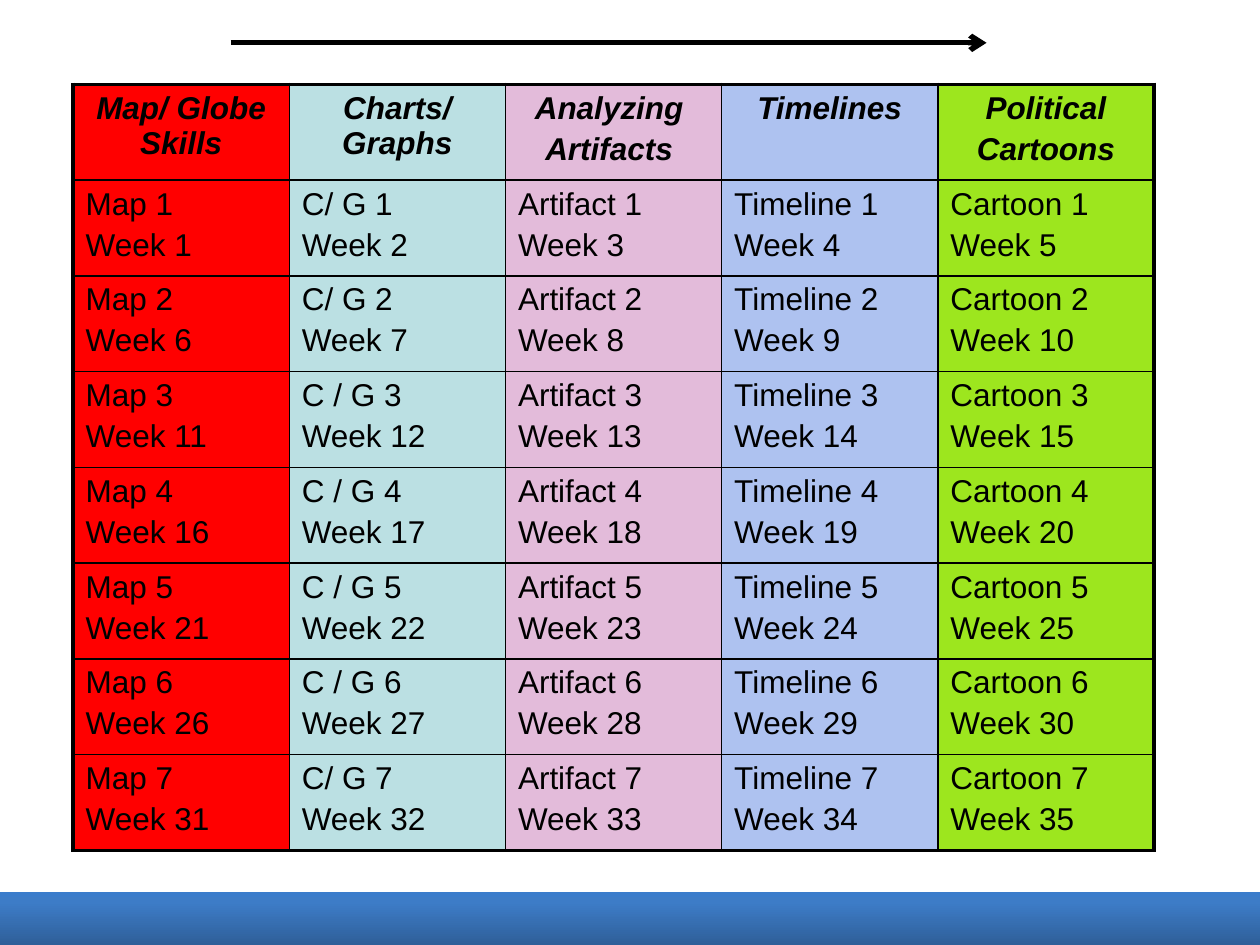
"""Build a weekly rotation table of social studies skills under an arrow."""
from copy import deepcopy
from dataclasses import dataclass

from lxml import etree
from pptx import Presentation
from pptx import util as u
from pptx.dml.color import RGBColor
from pptx.enum import shapes, text
from pptx.oxml import ns

BLACK = "000000"
WEEKS = 7
LEFT, TOP, COLUMN_WIDTH, ROW_HEIGHT = 0.58, 0.67, 1.716, 0.76
THIN, THICK = 1, 2.25


@dataclass(frozen=True)
class Skill:
    heading: str
    items: tuple[str, ...]
    fill: str


def numbered(name: str) -> tuple[str, ...]:
    return tuple(f"{name} {number}" for number in range(1, WEEKS + 1))


CHARTS = tuple(
    f"C / G {number}" if 3 <= number <= 6 else f"C/ G {number}"
    for number in range(1, WEEKS + 1)
)
SKILLS = (
    Skill("Map/ Globe Skills", numbered("Map"), "FF0000"),
    Skill("Charts/ Graphs", CHARTS, "BBE0E3"),
    Skill("Analyzing \nArtifacts ", numbered("Artifact"), "E3BBDA"),
    Skill("Timelines", numbered("Timeline"), "AEC2F0"),
    Skill("Political\nCartoons", numbered("Cartoon"), "9DE61E"),
)


def color(value: str) -> RGBColor:
    return RGBColor.from_string(value)


def add_band(slide) -> None:
    band = slide.shapes.add_shape(
        shapes.MSO_SHAPE.RECTANGLE,
        u.Inches(0), u.Inches(7.08), u.Inches(10), u.Inches(0.42),
    )
    band.shadow.inherit = False
    band.line.fill.background()
    band.fill.gradient()
    band.fill.gradient_angle = 90
    stop_list = band._element.spPr.find(".//" + ns.qn("a:gsLst"))
    stop_list.append(deepcopy(stop_list[-1]))
    stops = ((0, "2F5F99"), (0.8, "3D7CC7"), (1, "3A7CCB"))
    for stop, (position, value) in zip(band.fill.gradient_stops, stops):
        stop.position = position
        stop.color.rgb = color(value)


def add_arrow(slide) -> None:
    arrow = slide.shapes.add_connector(
        shapes.MSO_CONNECTOR.STRAIGHT,
        u.Inches(1.83), u.Inches(0.34), u.Inches(7.83), u.Inches(0.34),
    )
    arrow.line.color.rgb = color(BLACK)
    arrow.line.width = u.Pt(3)
    line = arrow.line._get_or_add_ln()
    etree.SubElement(line, ns.qn("a:tailEnd"), type="arrow")
    etree.SubElement(arrow._element.spPr, ns.qn("a:effectLst"))


def set_borders(cell, row: int, column: int) -> None:
    outer_edges = {
        "lnL": column == 0,
        "lnR": column == len(SKILLS) - 1,
        "lnT": row == 0,
        "lnB": row == WEEKS,
    }
    properties = cell._tc.get_or_add_tcPr()
    for tag, outer in outer_edges.items():
        width = u.Pt(THICK if outer else THIN)
        line = etree.SubElement(properties, ns.qn(f"a:{tag}"), w=str(width))
        fill = etree.SubElement(line, ns.qn("a:solidFill"))
        etree.SubElement(fill, ns.qn("a:srgbClr"), val=BLACK)


def fill_cell(cell, content: str, fill: str, heading: bool) -> None:
    cell.fill.solid()
    cell.fill.fore_color.rgb = color(fill)
    cell.text_frame.text = content
    for index, paragraph in enumerate(cell.text_frame.paragraphs):
        paragraph.alignment = text.PP_ALIGN.CENTER if heading else text.PP_ALIGN.LEFT
        if index:
            paragraph.space_before = u.Pt(3.3)
        for run in paragraph.runs:
            run.font.name = "Arial"
            run.font.size = u.Pt(18)
            run.font.bold = run.font.italic = heading
            run.font.color.rgb = color(BLACK)


def add_schedule(slide) -> None:
    columns, rows = len(SKILLS), WEEKS + 1
    table = slide.shapes.add_table(
        rows, columns, u.Inches(LEFT), u.Inches(TOP),
        u.Inches(COLUMN_WIDTH * columns), u.Inches(ROW_HEIGHT * rows),
    ).table
    table.first_row = table.horz_banding = False
    for column, skill in enumerate(SKILLS):
        table.columns[column].width = u.Inches(COLUMN_WIDTH)
        for row in range(rows):
            cell = table.cell(row, column)
            week = (row - 1) * columns + column + 1
            content = f"{skill.items[row - 1]}\nWeek {week}" if row else skill.heading
            set_borders(cell, row, column)
            fill_cell(cell, content, skill.fill, row == 0)


def main() -> None:
    presentation = Presentation()
    presentation.slide_width = u.Inches(10)
    presentation.slide_height = u.Inches(7.5)
    slide = presentation.slides.add_slide(presentation.slide_layouts[6])
    add_band(slide)
    add_schedule(slide)
    add_arrow(slide)
    presentation.save("out.pptx")


if __name__ == "__main__":
    main()
